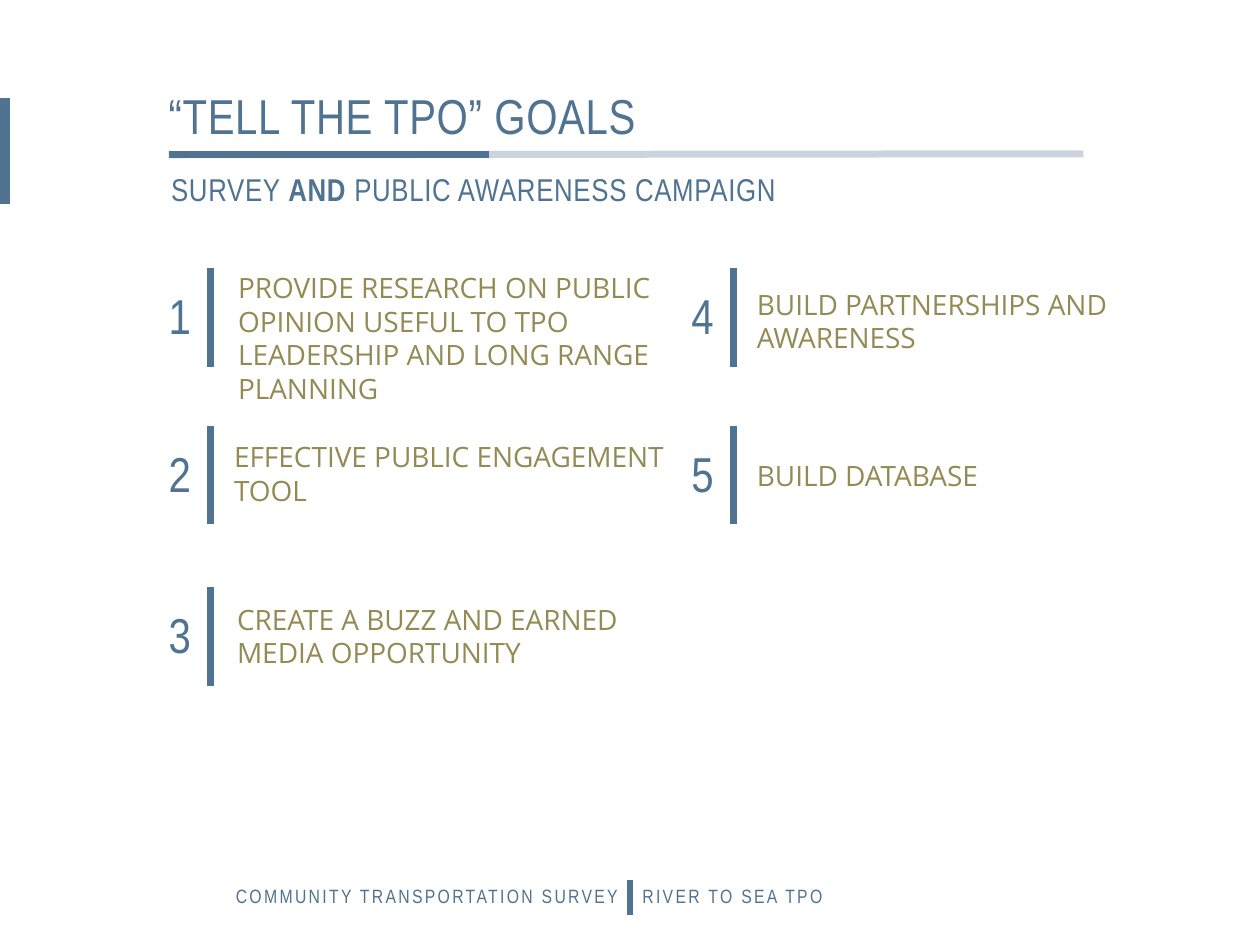
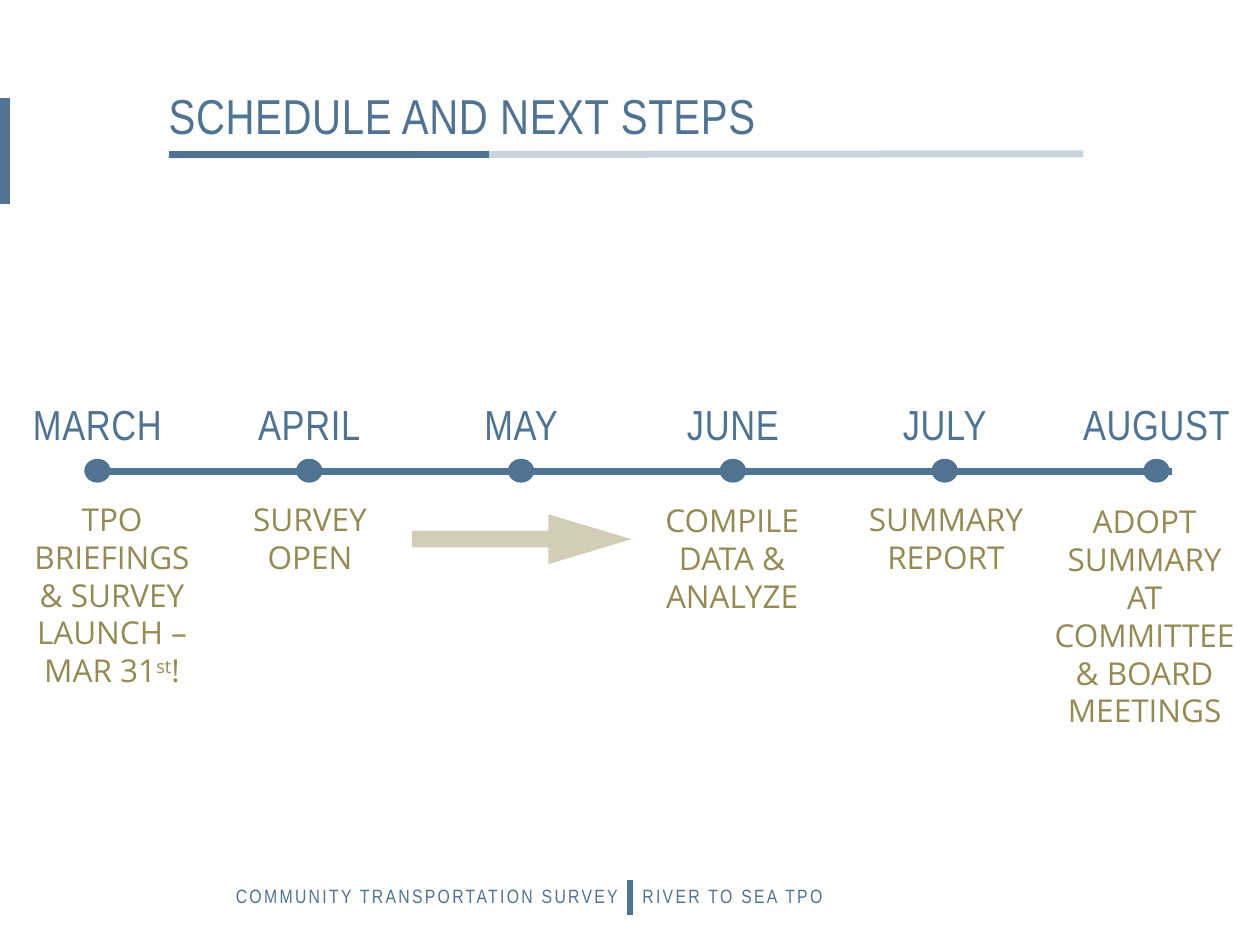
from pptx import Presentation
from pptx.dml.color import RGBColor
from pptx.enum.shapes import MSO_CONNECTOR, MSO_SHAPE as SHAPE
from pptx.enum.text import MSO_AUTO_SIZE as FIT, PP_ALIGN as ALIGN
from pptx.oxml.ns import qn
from pptx.util import Cm, Pt
from lxml.etree import SubElement

rgb = RGBColor.from_string
BLUE, OLIVE = "507392", "948A54"

# Text styles: font, size, colour, letter spacing in hundredths of a point
TITLE = ("Arial Narrow", 28, BLUE, 40)
SUBTITLE = ("Arial Narrow", 18, BLUE, 40)
MONTH = ("Arial Narrow", 24, BLUE, 40)
FOOTER = ("Arial Narrow", 11, BLUE, 130)
GOAL = ("Open Sans", 16, OLIVE, 0)
STEP = ("Open Sans", 18, OLIVE, 0)


def add_text(s, x, y, w, h, paragraphs, style, align=ALIGN.LEFT):
    """Each paragraph is a list of runs (text, mark); mark is "", "bold" or "super"."""
    font, size, color, spacing = style
    tf = s.shapes.add_textbox(Cm(x), Cm(y), Cm(w), Cm(h)).text_frame
    tf.word_wrap = True
    tf.auto_size = FIT.SHAPE_TO_FIT_TEXT
    tf.margin_left = tf.margin_right = Cm(0.1)
    tf.margin_top = tf.margin_bottom = Cm(0.05)
    for i, runs in enumerate(paragraphs):
        p = tf.add_paragraph() if i else tf.paragraphs[0]
        p.alignment = align
        for text, mark in runs:
            r = p.add_run()
            r.text = text
            r.font.name, r.font.size = font, Pt(size)
            r.font.color.rgb = rgb(color)
            r.font.bold = mark == "bold"
            rPr = r._r.get_or_add_rPr()
            if spacing:
                rPr.set("spc", str(spacing))
            if mark == "super":
                rPr.set("baseline", "30000")


def add_line(s, x1, y1, x2, y2, color=BLUE, width=4, opacity=100):
    line = s.shapes.add_connector(MSO_CONNECTOR.STRAIGHT, Cm(x1), Cm(y1), Cm(x2), Cm(y2))
    line.line.color.rgb = rgb(color)
    line.line.width = Pt(width)
    ln = line.line._get_or_add_ln()
    if opacity < 100:
        SubElement(ln.find(".//" + qn("a:srgbClr")), qn("a:alpha"), val=str(opacity * 1000))
    SubElement(line._element.spPr, qn("a:effectLst"))
    return ln


prs = Presentation()
prs.slide_width, prs.slide_height = Cm(25.4), Cm(19.05)
solids = []

# Shared frame: title, rule, side tab and footer
for title in ("“TELL THE TPO” GOALS", "SCHEDULE AND NEXT STEPS"):
    s = prs.slides.add_slide(prs.slide_layouts[6])
    add_line(s, 3.4, 3.12, 21.84, 3.1, opacity=30)
    add_line(s, 3.4, 3.12, 9.86, 3.12)
    solids.append(s.shapes.add_shape(SHAPE.RECTANGLE, 0, Cm(1.98), Cm(0.2), Cm(2.13)))
    add_text(s, 3.3, 1.68, 16, 1.3, [[(title, "")]], TITLE)
    add_text(s, 4.24, 17.78, 8.33, 1.04, [[("COMMUNITY TRANSPORTATION SURVEY", "")]],
             FOOTER, ALIGN.RIGHT)
    add_line(s, 12.7, 18.44, 12.7, 17.73)
    add_text(s, 12.85, 17.78, 8.03, 0.58, [[("RIVER TO SEA TPO", "")]], FOOTER)
goals_slide, schedule_slide = prs.slides

# Goals: numbers run down the first column, then the second
add_text(goals_slide, 3.35, 3.38, 19.23, 0.89,
         [[("SURVEY ", ""), ("AND ", "bold"), ("PUBLIC AWARENESS CAMPAIGN", "")]], SUBTITLE)
columns, rows = (4.24, 14.78), (5.41, 8.59, 11.84)
goals = [  # text, left, top, width, height
    ("PROVIDE RESEARCH ON PUBLIC OPINION USEFUL TO TPO LEADERSHIP AND LONG RANGE PLANNING",
     4.7, 5.41, 9.22, 2.16),
    ("EFFECTIVE PUBLIC ENGAGEMENT TOOL", 4.62, 8.81, 9.22, 1.47),
    ("CREATE A BUZZ AND EARNED MEDIA OPPORTUNITY", 4.68, 12.09, 9.22, 1.47),
    ("BUILD PARTNERSHIPS AND AWARENESS", 15.16, 5.74, 8.84, 1.47),
    ("BUILD DATABASE", 15.16, 9.19, 6.68, 0.79),
]
for i, (goal, x, y, w, h) in enumerate(goals):
    bar_x, bar_y = columns[i // 3], rows[i % 3]
    add_line(goals_slide, bar_x, bar_y, bar_x, bar_y + 1.98)
    add_text(goals_slide, bar_x - 0.94, bar_y + 0.3, 0.56, 1.3, [[(str(i + 1), "")]], TITLE)
    add_text(goals_slide, x, y, w, h, [[(goal, "")]], GOAL)

# Schedule: one dot and label per month
add_line(schedule_slide, 1.83, 9.5, 23.62, 9.5)
for i, month in enumerate(("MARCH", "APRIL", "MAY", "JUNE", "JULY", "AUGUST")):
    dot_x = 1.7 + 4.27 * i
    solids.append(schedule_slide.shapes.add_shape(
        SHAPE.OVAL, Cm(dot_x), Cm(9.25), Cm(0.53), Cm(0.48)))
    add_text(schedule_slide, dot_x - 1.93, 7.98, 4.39, 1.14, [[(month, "")]],
             MONTH, ALIGN.CENTER)

steps = [  # paragraphs, left, top, width, height
    ([[("TPO BRIEFINGS & SURVEY LAUNCH –", "")],
      [("MAR 31", ""), ("st", "super"), ("!", "")]], 0.56, 10.03, 3.4, 3.96),
    ([[("SURVEY OPEN", "")]], 4.55, 10.03, 3.4, 1.65),
    ([[("COMPILE DATA & ANALYZE", "")]], 13.06, 10.05, 3.4, 2.41),
    ([[("SUMMARY REPORT", "")]], 17.37, 10.03, 3.4, 1.65),
    ([[("ADOPT SUMMARY AT COMMITTEE & BOARD MEETINGS", "")]], 21.13, 10.08, 3.89, 3.96),
]
for paragraphs, x, y, w, h in steps:
    add_text(schedule_slide, x, y, w, h, paragraphs, STEP, ALIGN.CENTER)
arrow = add_line(schedule_slide, 8.31, 10.87, 12.73, 10.87, OLIVE, 9.5, 42)
SubElement(arrow, qn("a:tailEnd"), type="triangle", w="med", len="lg")

for sp in solids:
    sp.shadow.inherit = False
    sp.fill.solid()
    sp.fill.fore_color.rgb = rgb(BLUE)
    sp.line.fill.background()

prs.save("out.pptx")
